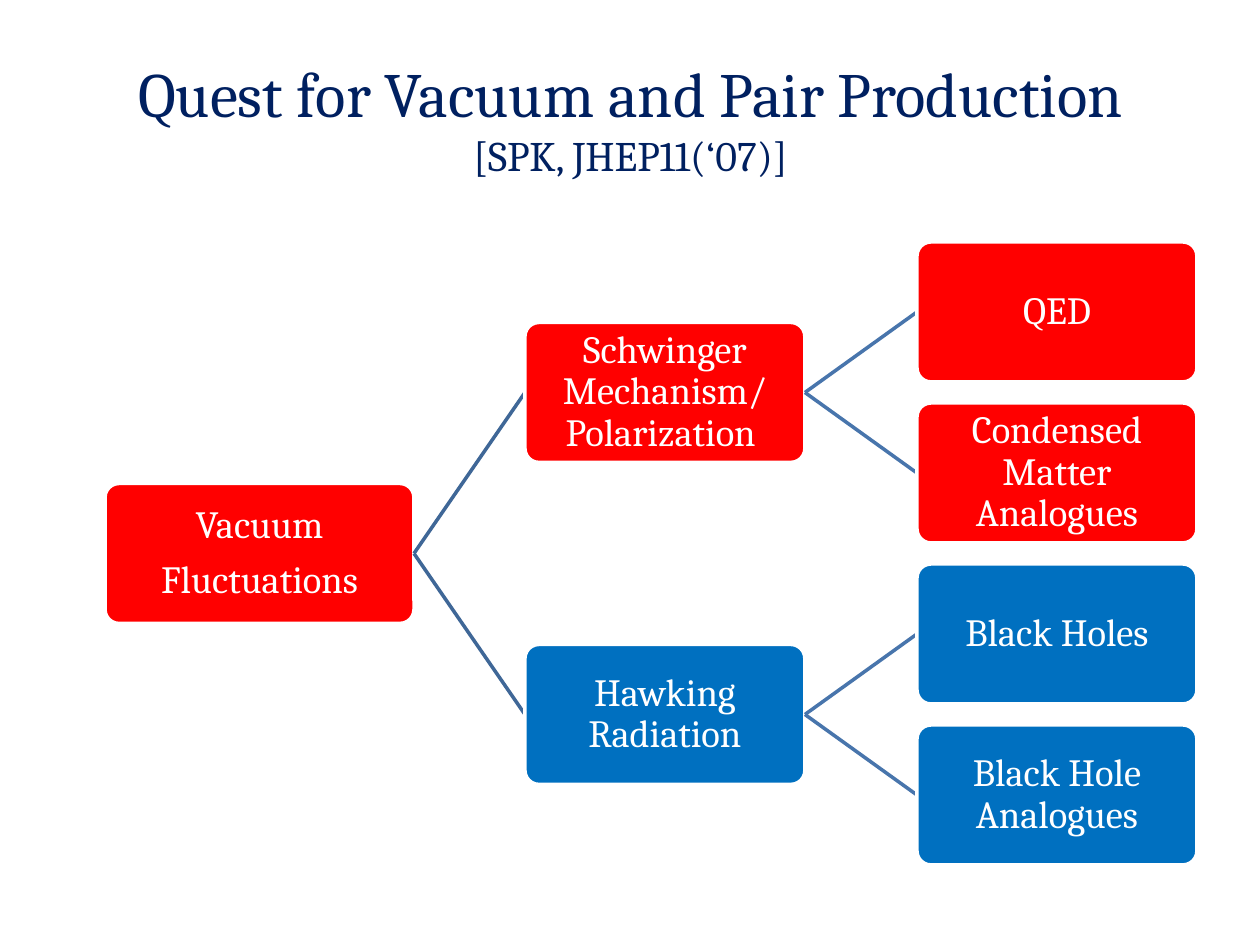
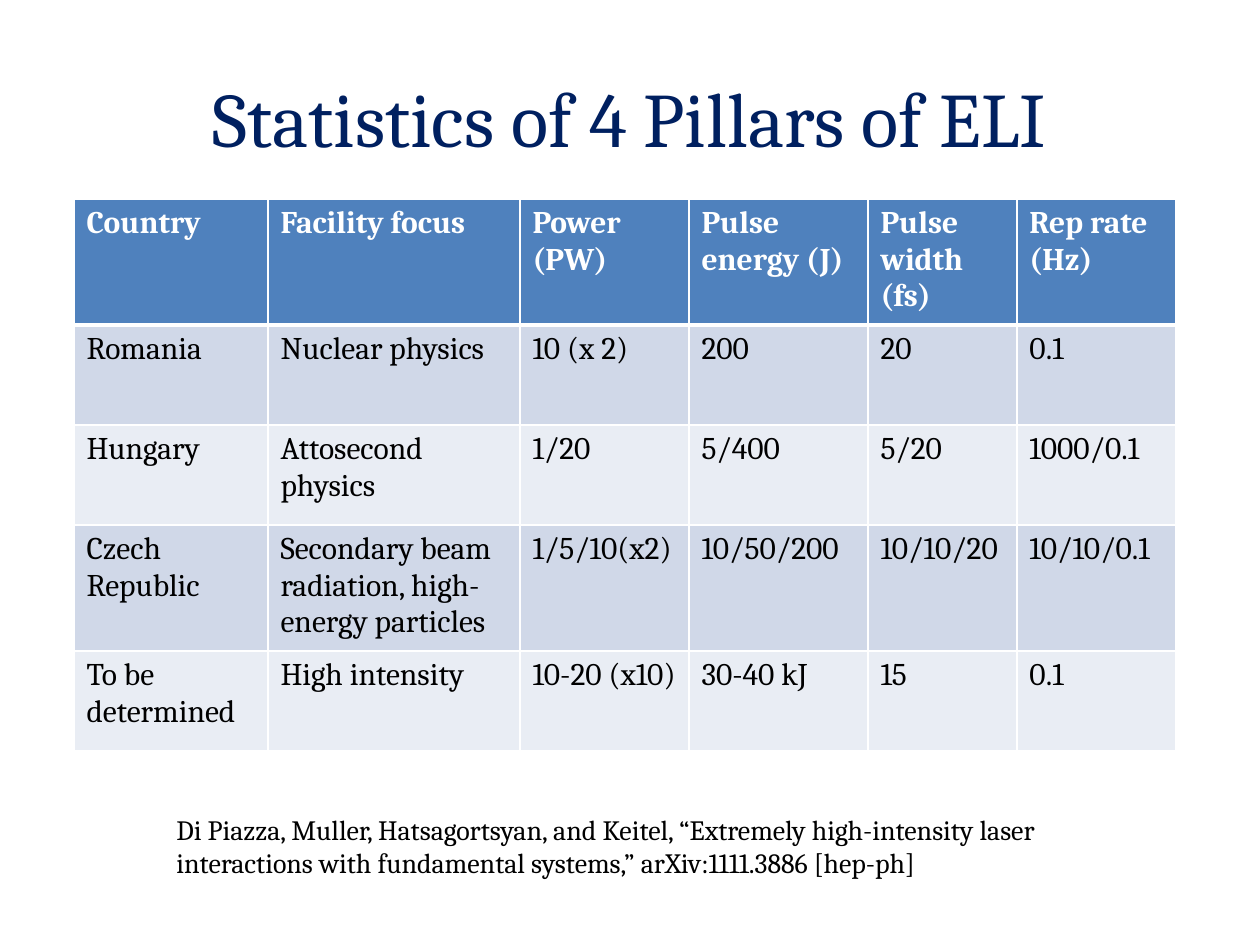
from lxml.etree import SubElement
from pptx import Presentation
from pptx.dml.color import RGBColor
from pptx.enum.shapes import MSO_CONNECTOR as Connector, MSO_SHAPE as Shape
from pptx.enum.text import MSO_ANCHOR as Anchor, PP_ALIGN as Align
from pptx.oxml.ns import qn
from pptx.util import Pt

EMU_PER_PX = 914400 / 126
FONT = "Cambria"
NAVY, RED, BLUE = "002060", "FF0000", "0070C0"
WHITE, BLACK = "FFFFFF", "000000"
HEADER_FILL, BAND_FILLS = "4F81BD", ("D0D8E8", "E9EDF4")
ROOT_LINE, BRANCH_LINE = "3F6797", "4875AC"

BOX_HEIGHT, LEAF_PITCH, LEAF_TOP = 140, 161, 242
ROOT_LEFT, ROOT_WIDTH = 105, 309
BRANCH_LEFT, LEAF_LEFT, BOX_WIDTH = 525, 917, 280

BRANCHES = [
    ("Schwinger Mechanism/ Polarization ", RED, ["QED", "Condensed Matter Analogues"]),
    ("Hawking Radiation", BLUE, ["Black Holes", "Black Hole Analogues"]),
]

COLUMN_WIDTHS = [194, 252, 169, 179, 149, 159]
ROW_HEIGHT = 100
FACILITIES = [
    ["Country", "Facility focus", "Power\n(PW)", "Pulse energy (J)", "Pulse width (fs)", "Rep rate (Hz)"],
    ["Romania", "Nuclear physics", "10 (x 2)", "200", "20", "0.1"],
    ["Hungary", "Attosecond physics", "1/20", "5/400", "5/20", "1000/0.1"],
    ["Czech Republic", "Secondary beam radiation, high-energy particles",
     "1/5/10(x2)", "10/50/200", "10/10/20", "10/10/0.1"],
    ["To be determined", "High intensity", "10-20 (x10)", "30-40 kJ", "15", "0.1"],
]


def px(*lengths):
    return [round(length * EMU_PER_PX) for length in lengths]


def color(value):
    return RGBColor.from_string(value)


def paint(target, value):
    target.fill.solid()
    target.fill.fore_color.rgb = color(value)


def add_run(paragraph, text, size, text_color, bold=False):
    run = paragraph.add_run()
    run.text = text
    run.font.name = FONT
    run.font.size = Pt(size)
    run.font.bold = bold
    run.font.color.rgb = color(text_color)


def add_paragraphs(frame, text, size, text_color, bold=False):
    for index, line in enumerate(text.split("\n")):
        paragraph = frame.add_paragraph() if index else frame.paragraphs[0]
        add_run(paragraph, line, size, text_color, bold)


def add_text_frame(slide, left, top, width, height):
    frame = slide.shapes.add_textbox(*px(left, top, width, height)).text_frame
    frame.word_wrap = True
    return frame


def add_title(slide, left, width, lines):
    frame = add_text_frame(slide, left, 38, width, 158)
    frame.vertical_anchor = Anchor.MIDDLE
    paragraph = frame.paragraphs[0]
    paragraph.alignment = Align.CENTER
    for index, (text, size) in enumerate(lines):
        if index:
            paragraph.add_line_break()
        add_run(paragraph, text, size, NAVY)


def add_box(slide, left, top, width, text, fill):
    box = slide.shapes.add_shape(Shape.ROUNDED_RECTANGLE, *px(left, top, width, BOX_HEIGHT))
    box.shadow.inherit = False
    box.adjustments[0] = 0.1
    paint(box, fill)
    box.line.color.rgb = color(WHITE)
    box.line.width = Pt(2)
    frame = box.text_frame
    frame.word_wrap = True
    frame.vertical_anchor = Anchor.MIDDLE
    frame.margin_left = frame.margin_right = frame.margin_top = frame.margin_bottom = Pt(1.1)
    add_paragraphs(frame, text, 22, WHITE)
    for paragraph in frame.paragraphs:
        paragraph.alignment = Align.CENTER
        paragraph.line_spacing = 0.9
    for paragraph in frame.paragraphs[:-1]:
        paragraph.space_after = Pt(7.7)


def add_link(slide, parent_right, parent_top, child_left, child_top, line_color):
    middle = BOX_HEIGHT / 2
    link = slide.shapes.add_connector(
        Connector.STRAIGHT,
        *px(parent_right, parent_top + middle, child_left, child_top + middle))
    link.line.color.rgb = color(line_color)
    link.line.width = Pt(2)
    SubElement(link._element.spPr, qn("a:effectLst"))


def add_tree(slide):
    root_top = LEAF_TOP + 1.5 * LEAF_PITCH
    add_box(slide, ROOT_LEFT, root_top, ROOT_WIDTH, "Vacuum\nFluctuations", RED)
    for branch_index, (branch, fill, leaves) in enumerate(BRANCHES):
        first_leaf_top = LEAF_TOP + 2 * branch_index * LEAF_PITCH
        branch_top = first_leaf_top + LEAF_PITCH / 2
        add_link(slide, ROOT_LEFT + ROOT_WIDTH, root_top, BRANCH_LEFT, branch_top, ROOT_LINE)
        add_box(slide, BRANCH_LEFT, branch_top, BOX_WIDTH, branch, fill)
        for leaf_index, leaf in enumerate(leaves):
            leaf_top = first_leaf_top + leaf_index * LEAF_PITCH
            add_link(slide, BRANCH_LEFT + BOX_WIDTH, branch_top, LEAF_LEFT, leaf_top, BRANCH_LINE)
            add_box(slide, LEAF_LEFT, leaf_top, BOX_WIDTH, leaf, fill)


def add_borders(cell, top_points, bottom_points):
    properties = cell._tc.get_or_add_tcPr()
    for side, points in (("L", 1), ("R", 1), ("T", top_points), ("B", bottom_points)):
        border = SubElement(properties, qn(f"a:ln{side}"), w=str(Pt(points)))
        fill = SubElement(border, qn("a:solidFill"))
        SubElement(fill, qn("a:srgbClr"), val=WHITE)


def add_facility_table(slide, left, top):
    table = slide.shapes.add_table(
        len(FACILITIES), len(COLUMN_WIDTHS),
        *px(left, top, sum(COLUMN_WIDTHS), ROW_HEIGHT * len(FACILITIES))).table
    for column, width in zip(table.columns, px(*COLUMN_WIDTHS)):
        column.width = width
    for row_index, texts in enumerate(FACILITIES):
        is_header = row_index == 0
        fill = HEADER_FILL if is_header else BAND_FILLS[(row_index - 1) % 2]
        for column_index, text in enumerate(texts):
            cell = table.cell(row_index, column_index)
            add_borders(cell, 3 if row_index == 1 else 1, 3 if is_header else 1)
            paint(cell, fill)
            add_paragraphs(cell.text_frame, text, 18, WHITE if is_header else BLACK, is_header)


def add_citation(slide, text):
    add_paragraphs(add_text_frame(slide, 164, 806, 964, 81), text, 16, BLACK)


def main():
    presentation = Presentation()
    presentation.slide_width, presentation.slide_height = px(1260, 945)
    blank = presentation.slide_layouts[6]

    quest = presentation.slides.add_slide(blank)
    add_title(quest, 25, 1211, [("Quest for Vacuum and Pair Production", 36), ("[SPK, JHEP11(‘07)]", 24)])
    add_tree(quest)

    pillars = presentation.slides.add_slide(blank)
    add_title(pillars, 63, 1134, [("Statistics of 4 Pillars of ELI", 44)])
    add_facility_table(pillars, 74, 199)
    add_citation(pillars, "Di Piazza, Muller, Hatsagortsyan, and Keitel, “Extremely high-intensity laser "
                          "interactions with fundamental systems,” arXiv:1111.3886 [hep-ph]")

    presentation.save("out.pptx")


if __name__ == "__main__":
    main()
